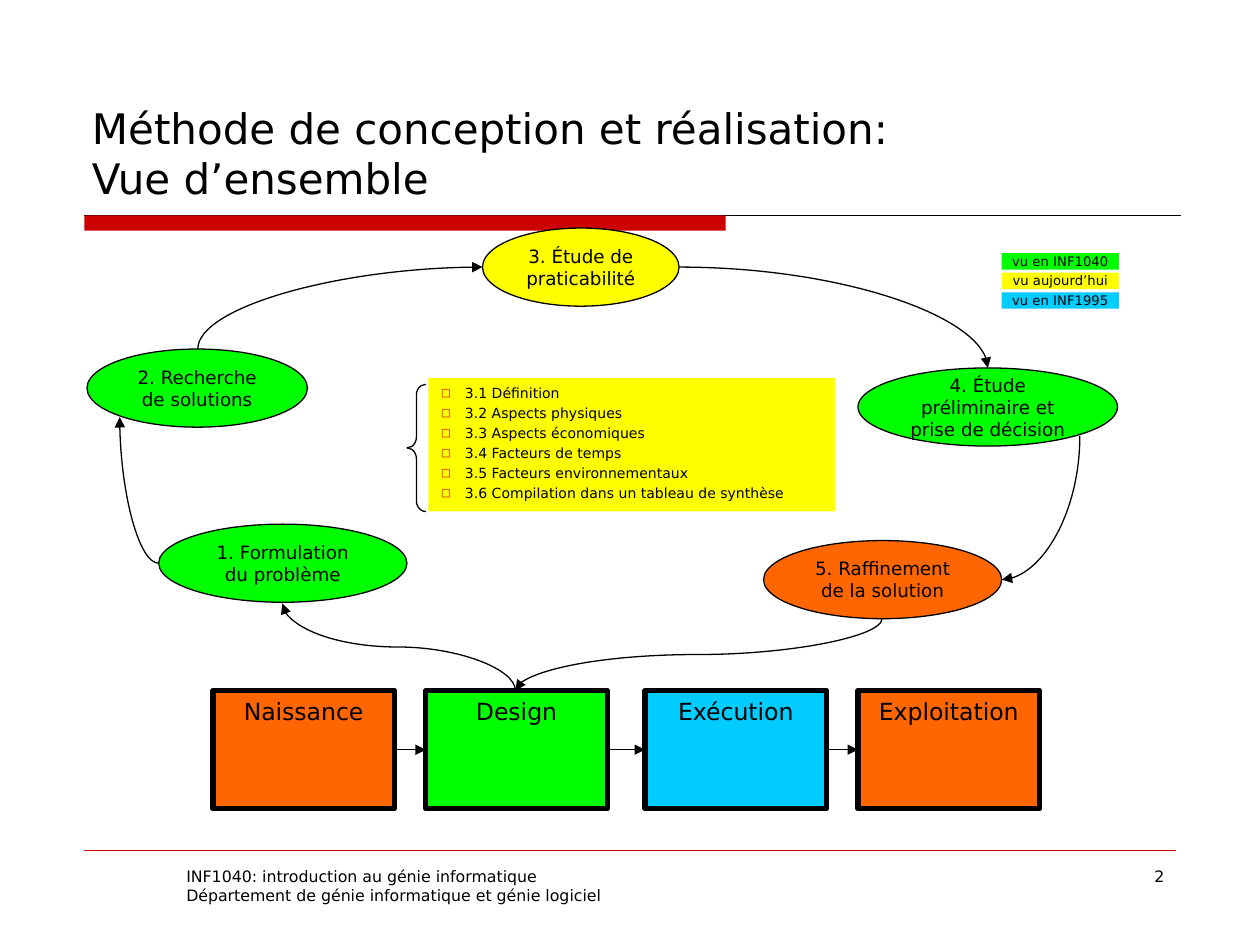
from dataclasses import dataclass
from itertools import pairwise

from lxml import etree
from pptx import Presentation
from pptx.dml.color import RGBColor
from pptx.enum.shapes import MSO_CONNECTOR, MSO_SHAPE
from pptx.enum.text import MSO_ANCHOR, MSO_AUTO_SIZE, PP_ALIGN
from pptx.oxml.ns import qn
from pptx.util import Inches, Pt

RECTANGLE, ELLIPSE, BRACE = MSO_SHAPE.RECTANGLE, MSO_SHAPE.OVAL, MSO_SHAPE.LEFT_BRACE
STRAIGHT, CURVE = MSO_CONNECTOR.STRAIGHT, MSO_CONNECTOR.CURVE
TOP, MIDDLE, BOTTOM = MSO_ANCHOR.TOP, MSO_ANCHOR.MIDDLE, MSO_ANCHOR.BOTTOM
LEFT, CENTER, RIGHT = PP_ALIGN.LEFT, PP_ALIGN.CENTER, PP_ALIGN.RIGHT
NO_FIT, GROW = MSO_AUTO_SIZE.NONE, MSO_AUTO_SIZE.SHAPE_TO_FIT_TEXT
LEFT_SIDE, RIGHT_SIDE = 1, 3

FONT = "DejaVu Sans"
COLORS = {
    "black": "000000",
    "red": "CC0000",
    "orange": "FF6600",
    "green": "00FF00",
    "yellow": "FFFF00",
    "blue": "00CCFF",
}


@dataclass(frozen=True)
class Block:
    text: str
    color: str
    left: float
    top: float
    width: float
    height: float


@dataclass(frozen=True)
class CurvedArrow:
    start: tuple[float, float]
    end: tuple[float, float]
    preset: str
    rotation: int = 0
    flips: str = ""


PHASES = [
    Block(text, color, left, 5.48, 1.44, 0.94)
    for text, color, left in [
        ("Naissance", "orange", 1.69),
        ("Design", "green", 3.38),
        ("Exécution", "blue", 5.12),
        ("Exploitation", "orange", 6.81),
    ]
]
STEPS = [
    Block("1. Formulation du problème", "green", 1.26, 4.16, 1.97, 0.62),
    Block("2. Recherche de solutions", "green", 0.69, 2.77, 1.75, 0.62),
    Block("3. Étude de praticabilité", "yellow", 3.83, 1.81, 1.56, 0.62),
    Block("4. Étude préliminaire et prise de décision", "green", 6.81, 2.92, 2.06, 0.62),
    Block("5. Raffinement de la solution", "orange", 6.06, 4.29, 1.89, 0.62),
]
LEGEND = [
    Block(text, color, 7.95, 2.01 + 0.155 * row, 0.93, 0.13)
    for row, (text, color) in enumerate([
        ("vu en INF1040", "green"),
        ("vu aujourd’hui", "yellow"),
        ("vu en INF1995", "blue"),
    ])
]
CYCLE = [
    CurvedArrow((4.09, 5.48), (2.24, 4.79), "curvedConnector3", 270, "V"),
    CurvedArrow((1.26, 4.47), (0.95, 3.31), "curvedConnector2", 180),
    CurvedArrow((1.57, 2.77), (3.83, 2.12), "curvedConnector2", 90, "HV"),
    CurvedArrow((5.39, 2.12), (7.84, 2.92), "curvedConnector2"),
    CurvedArrow((8.57, 3.46), (7.95, 4.60), "curvedConnector2", 90),
    CurvedArrow((7.00, 4.91), (4.09, 5.48), "curvedConnector3", 90),
]
TITLE_LINES = ["Méthode de conception et réalisation:", "Vue d’ensemble"]
STUDY_TOPICS = [
    "3.1 Définition",
    "3.2 Aspects physiques",
    "3.3 Aspects économiques",
    "3.4 Facteurs de temps",
    "3.5 Facteurs environnementaux",
    "3.6 Compilation dans un tableau de synthèse",
]
FOOTER_LINES = [
    "INF1040: introduction au génie informatique",
    "Département de génie informatique et génie logiciel",
]


def rgb(name: str) -> RGBColor:
    return RGBColor.from_string(COLORS[name])


def place(shape, left: float, top: float, width: float, height: float) -> None:
    shape.left, shape.top = Inches(left), Inches(top)
    shape.width, shape.height = Inches(width), Inches(height)


def add_text(paragraph, text: str, size: float) -> None:
    run = paragraph.add_run()
    run.text = text
    run.font.name, run.font.size = FONT, Pt(size)
    run.font.color.rgb = rgb("black")


def write_lines(frame, lines: list[str], size: float, align=LEFT) -> None:
    """Write one paragraph per line, starting in the frame's first paragraph."""
    frame.word_wrap = True
    for index, line in enumerate(lines):
        paragraph = frame.add_paragraph() if index else frame.paragraphs[0]
        paragraph.alignment = align
        add_text(paragraph, line, size)


def add_block(shapes, block: Block, kind, size: float, border: float = 0, anchor=TOP):
    shape = shapes.add_shape(kind, *map(Inches, (block.left, block.top, block.width, block.height)))
    shape.shadow.inherit = False
    shape.fill.solid()
    shape.fill.fore_color.rgb = rgb(block.color)
    if border:
        shape.line.color.rgb, shape.line.width = rgb("black"), Pt(border)
    else:
        shape.line.fill.background()
    if block.text:
        shape.text_frame.vertical_anchor = anchor
        write_lines(shape.text_frame, [block.text], size, CENTER)
    return shape


def add_line(shapes, kind, start, end, color: str = "black", width: float = 0.75, arrow: bool = True):
    line = shapes.add_connector(kind, *map(Inches, (*start, *end)))
    line.line.color.rgb, line.line.width = rgb(color), Pt(width)
    properties = line._element.spPr
    if arrow:
        etree.SubElement(properties.find(qn("a:ln")), qn("a:tailEnd"), type="triangle")
    etree.SubElement(properties, qn("a:effectLst"))
    return line


def add_curved_arrow(shapes, arrow: CurvedArrow) -> None:
    """Draw the unrotated frame around the arrow's centre, then turn and flip it."""
    (x1, y1), (x2, y2) = arrow.start, arrow.end
    width, height = abs(x2 - x1), abs(y2 - y1)
    if arrow.rotation in (90, 270):
        width, height = height, width
    left, top = (x1 + x2 - width) / 2, (y1 + y2 - height) / 2
    line = add_line(shapes, CURVE, (left, top), (left + width, top + height))
    properties = line._element.spPr
    properties.find(qn("a:prstGeom")).set("prst", arrow.preset)
    frame = properties.find(qn("a:xfrm"))
    frame.set("rot", str(arrow.rotation * 60000))
    for axis in arrow.flips:
        frame.set(f"flip{axis}", "1")


def add_square_bullet(paragraph) -> None:
    properties = paragraph._p.get_or_add_pPr()
    properties.set("marL", str(Inches(0.19)))
    properties.set("indent", str(Inches(-0.19)))
    color = etree.SubElement(properties, qn("a:buClr"))
    etree.SubElement(color, qn("a:srgbClr"), val=COLORS["red"])
    etree.SubElement(properties, qn("a:buSzPct"), val="75000")
    etree.SubElement(properties, qn("a:buFont"), typeface=FONT)
    etree.SubElement(properties, qn("a:buChar"), char="□")


def fill_title(title) -> None:
    place(title, 0.63, 0.33, 8.75, 1.33)
    frame = title.text_frame
    frame.auto_size, frame.vertical_anchor, frame.word_wrap = NO_FIT, BOTTOM, True
    paragraph = frame.paragraphs[0]
    paragraph.alignment = LEFT
    add_text(paragraph, TITLE_LINES[0], 24)
    paragraph.add_line_break()
    add_text(paragraph, TITLE_LINES[1], 24)


def fill_topics(body) -> None:
    place(body, 3.4, 3, 3.23, 1.06)
    body.fill.solid()
    body.fill.fore_color.rgb = rgb("yellow")
    body.text_frame.auto_size = NO_FIT
    write_lines(body.text_frame, STUDY_TOPICS, 8)
    for index, paragraph in enumerate(body.text_frame.paragraphs):
        add_square_bullet(paragraph)
        paragraph.space_before = Pt(1.86 if index else 0)


def main() -> None:
    presentation = Presentation()
    presentation.slide_width, presentation.slide_height = Inches(10), Inches(7.5)
    slide = presentation.slides.add_slide(presentation.slide_layouts[1])
    shapes = slide.shapes
    fill_title(shapes.title)
    fill_topics(slide.placeholders[1])

    add_line(shapes, STRAIGHT, (0.67, 1.71), (9.37, 1.71), arrow=False)
    add_block(shapes, Block("", "red", 0.67, 1.71, 5.09, 0.12), RECTANGLE, 0)
    add_line(shapes, STRAIGHT, (0.67, 6.75), (9.33, 6.75), "red", 0.25, arrow=False)
    footer = shapes.add_textbox(*map(Inches, (1.38, 6.83, 5.21, 0.5)))
    write_lines(footer.text_frame, FOOTER_LINES, 9)
    page_number = shapes.add_textbox(*map(Inches, (7.17, 6.83, 2.17, 0.52)))
    write_lines(page_number.text_frame, ["2"], 9, RIGHT)

    phases = [add_block(shapes, phase, RECTANGLE, 13.5, border=3) for phase in PHASES]
    for before, after in pairwise(phases):
        link = add_line(shapes, STRAIGHT, (0, 0), (1, 0))
        link.begin_connect(before, RIGHT_SIDE)
        link.end_connect(after, LEFT_SIDE)
    for step in STEPS:
        add_block(shapes, step, ELLIPSE, 10.5, border=0.75, anchor=MIDDLE)
    for arrow in CYCLE:
        add_curved_arrow(shapes, arrow)

    brace = add_block(shapes, Block("", "black", 3.23, 3.05, 0.15, 1.01), BRACE, 0, border=0.75)
    brace.fill.background()
    brace.adjustments[0] = 0.56
    for entry in LEGEND:
        frame = add_block(shapes, entry, RECTANGLE, 7.5).text_frame
        frame.margin_left = frame.margin_right = frame.margin_top = frame.margin_bottom = 0
        frame.auto_size = GROW
    presentation.save("out.pptx")


if __name__ == "__main__":
    main()
